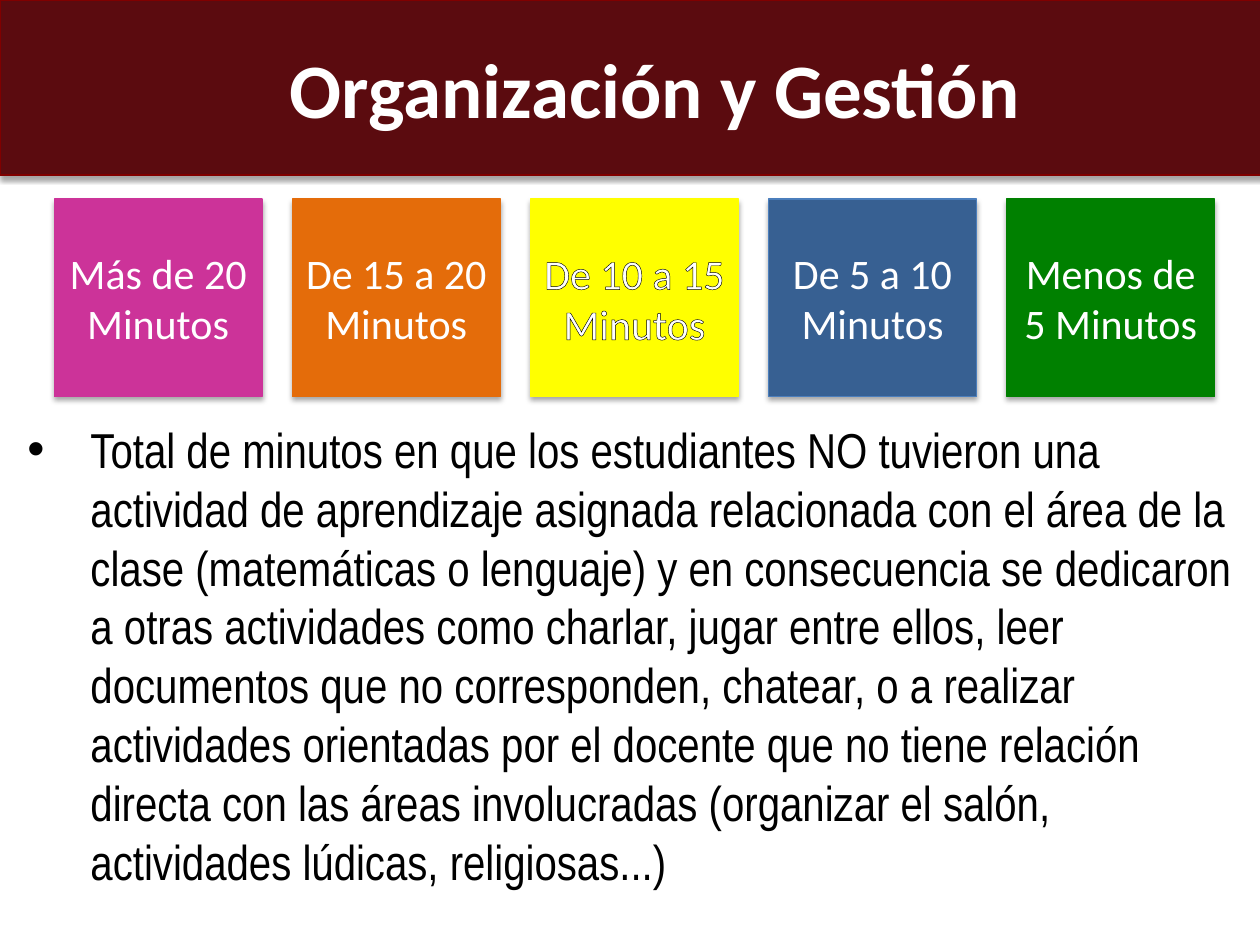
from lxml import etree
from pptx import Presentation
from pptx import util as u
from pptx.dml.color import RGBColor
from pptx.enum import shapes, text
from pptx.oxml import ns

COLORS = {
    "banner": "5B0B0F", "banner_edge": "800000", "white": "FFFFFF", "black": "000000",
    "pink": "CC3399", "orange": "E46C0A", "yellow": "FFFF00",
    "blue": "376092", "blue_edge": "4B7EBC", "green": "008000",
}
FORMATS = {
    "title": {"size": u.Pt(44), "name": "Calibri", "bold": True},
    "range": {"size": u.Pt(24), "name": "Calibri", "bold": False},
    "body": {"size": u.Pt(28), "name": "Arial Narrow", "bold": False},
}
TITLE = "Organización y Gestión "
# label, fill, edge, text outline
RANGES = [
    ("Más de 20 Minutos", "pink", "pink", None),
    ("De 15 a 20 Minutos", "orange", "orange", None),
    ("De 10 a 15 Minutos", "yellow", "yellow", "black"),
    ("De 5 a 10 Minutos", "blue", "blue_edge", None),
    ("Menos de 5 Minutos", "green", "green", None),
]
EXPLANATION = (
    "Total de minutos en que los estudiantes NO tuvieron una actividad de "
    "aprendizaje asignada relacionada con el área de la clase (matemáticas o "
    "lenguaje) y en consecuencia se dedicaron a otras actividades como charlar, "
    "jugar entre ellos, leer documentos que no corresponden, chatear, o a realizar "
    "actividades orientadas por el docente que no tiene relación directa con las "
    "áreas involucradas (organizar el salón, actividades lúdicas, religiosas...)"
)
GRID = {"left": 0.43, "top": 1.58, "step": 1.89, "width": 1.65, "height": 1.57}


def rgb(key):
    return RGBColor.from_string(COLORS[key])


def add_color(parent, key, alpha=None):
    color = etree.SubElement(parent, ns.qn("a:srgbClr"), val=COLORS[key])
    if alpha is not None:
        etree.SubElement(color, ns.qn("a:alpha"), val=str(alpha * 1000))


class SlideBuilder:
    def __init__(self, prs):
        self.slide = prs.slides.add_slide(prs.slide_layouts[5])

    def place(self, shape, left, top, width, height):
        shape.left, shape.top = u.Inches(left), u.Inches(top)
        shape.width, shape.height = u.Inches(width), u.Inches(height)

    def paint(self, shape, fill, edge):
        """Fill and outline a shape and give it the soft shadow."""
        shape.fill.solid()
        shape.fill.fore_color.rgb = rgb(fill)
        shape.line.color.rgb = rgb(edge)
        shape.line.width = u.Pt(0.75)
        shape.shadow.inherit = False
        effects = shape._element.spPr.find(ns.qn("a:effectLst"))
        shadow = etree.SubElement(
            effects, ns.qn("a:outerShdw"), blurRad=str(u.Pt(3.1)), dist=str(u.Pt(1.8)),
            dir="5400000", rotWithShape="0")
        add_color(shadow, "black", 35)

    def set_text(self, shape, words, style, color, align, anchor, indent=(0, 0), bullet=None):
        frame = shape.text_frame
        frame.word_wrap = True
        frame.auto_size = text.MSO_AUTO_SIZE.NONE
        frame.vertical_anchor = anchor
        paragraph = frame.paragraphs[0]
        paragraph.alignment = align
        props = paragraph._p.get_or_add_pPr()
        for key, inches in zip(("marL", "indent"), indent):
            props.set(key, str(u.Inches(inches)))
        if bullet:
            etree.SubElement(props, ns.qn("a:buFont"), typeface="Arial")
            etree.SubElement(props, ns.qn("a:buChar"), char=bullet)
        run = paragraph.add_run()
        run.text = words
        for key, value in FORMATS[style].items():
            setattr(run.font, key, value)
        run.font.color.rgb = rgb(color)
        return run

    def title(self, words):
        banner = self.slide.shapes.title
        self.place(banner, 0, 0, 10.04, 1.39)
        self.paint(banner, "banner", "banner_edge")
        self.set_text(banner, words, "title", "white", text.PP_ALIGN.CENTER,
                      text.MSO_ANCHOR.MIDDLE, indent=(0.5, 0))

    def range_box(self, column, words, fill, edge, outline):
        box = self.slide.shapes.add_shape(shapes.MSO_SHAPE.RECTANGLE, 0, 0, 0, 0)
        self.place(box, GRID["left"] + column * GRID["step"], GRID["top"],
                   GRID["width"], GRID["height"])
        self.paint(box, fill, edge)
        run = self.set_text(box, words, "range", "white", text.PP_ALIGN.CENTER,
                            text.MSO_ANCHOR.MIDDLE)
        if outline:
            stroke = etree.Element(ns.qn("a:ln"), w=str(u.Pt(0.75)))
            add_color(etree.SubElement(stroke, ns.qn("a:solidFill")), outline)
            run._r.get_or_add_rPr().insert(0, stroke)

    def bullet_text(self, words):
        body = self.slide.shapes.add_textbox(0, 0, 0, 0)
        self.place(body, 0.12, 3.28, 9.8, 3.87)
        self.set_text(body, words, "body", "black", text.PP_ALIGN.LEFT,
                      text.MSO_ANCHOR.TOP, indent=(0.5, -0.5), bullet="•")
        body.text_frame.auto_size = text.MSO_AUTO_SIZE.SHAPE_TO_FIT_TEXT


def main():
    prs = Presentation()
    prs.slide_width, prs.slide_height = u.Inches(10), u.Inches(7.5)
    builder = SlideBuilder(prs)
    builder.title(TITLE)
    builder.bullet_text(EXPLANATION)
    for column, minutes in enumerate(RANGES):
        builder.range_box(column, *minutes)
    prs.save("out.pptx")


if __name__ == "__main__":
    main()
